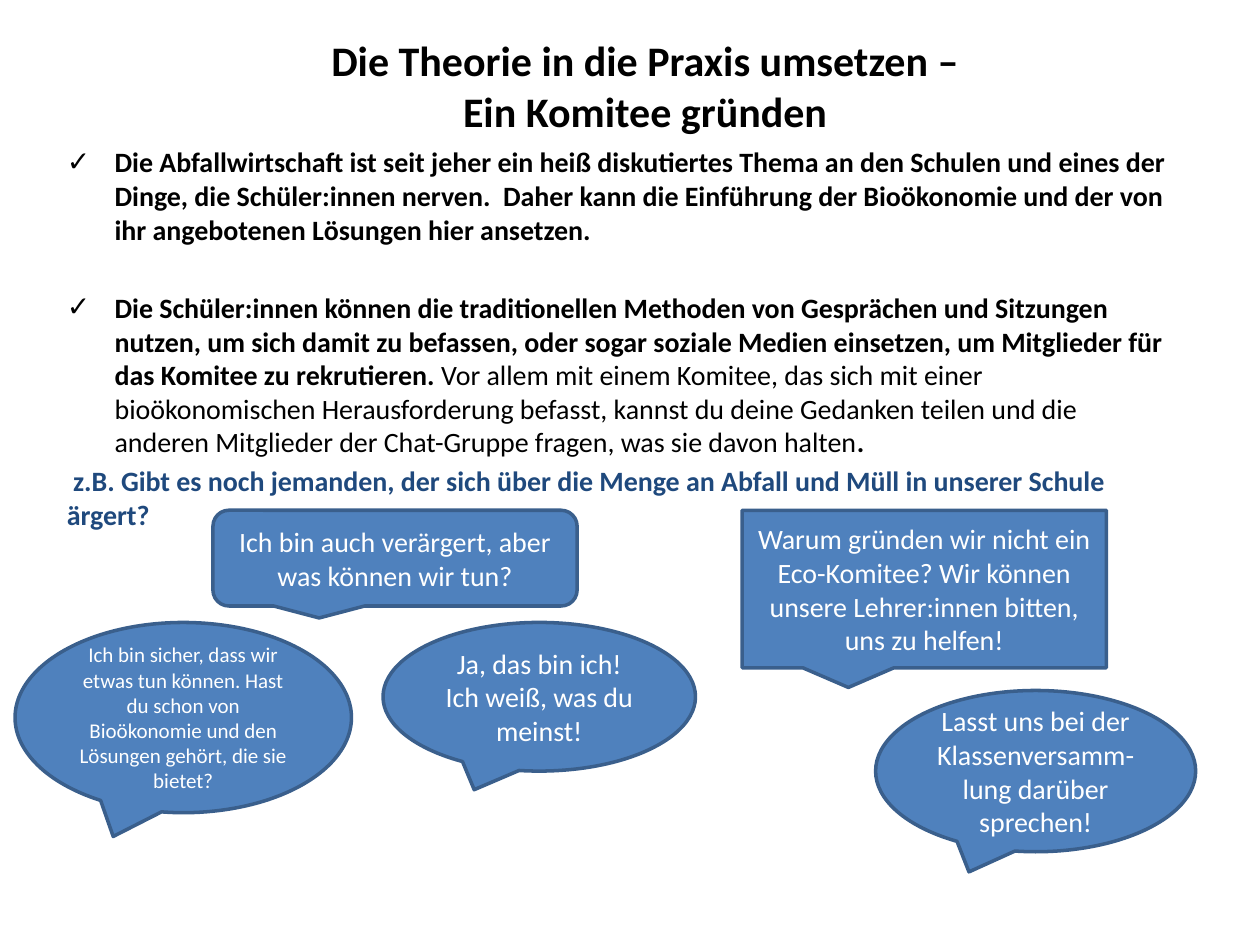
from lxml.etree import SubElement
from pptx import Presentation
from pptx.dml.color import RGBColor
from pptx.enum.shapes import MSO_SHAPE
from pptx.enum.text import MSO_ANCHOR, MSO_AUTO_SIZE, PP_ALIGN
from pptx.oxml.ns import qn
from pptx.util import Inches, Pt

BLACK = RGBColor(0x00, 0x00, 0x00)
WHITE = RGBColor(0xFF, 0xFF, 0xFF)
NAVY = RGBColor(0x1F, 0x49, 0x7D)
BLUE = RGBColor(0x4F, 0x81, 0xBD)
OUTLINE = RGBColor(0x3A, 0x5F, 0x8C)
ROW_TOP, ROW_MIDDLE = 4.05, 4.94


def add_span(para, text, color, **formats):
    span = para.add_run()
    span.text = text
    for name, value in {"name": "Calibri", "size": Pt(16), "bold": False, **formats}.items():
        setattr(span.font, name, value)
    span.font.color.rgb = color


def place(box, left, top, width, height):
    box.left, box.top, box.width, box.height = map(Inches, (left, top, width, height))


deck = Presentation()
deck.slide_width, deck.slide_height = Inches(10), Inches(7.5)
page = deck.slides.add_slide(deck.slide_layouts[1])

# Title
title = page.shapes.title
place(title, 2.48, 0.05, 5.28, 1.25)
title.text_frame.auto_size = MSO_AUTO_SIZE.NONE
title.text_frame.vertical_anchor = MSO_ANCHOR.MIDDLE
heading = title.text_frame.paragraphs[0]
heading.alignment = PP_ALIGN.CENTER
add_span(heading, "Die Theorie in die Praxis umsetzen – Ein Komitee gründen",
         BLACK, size=Pt(24), bold=True)

# Checklist: bullet, space before, spans of text, colour and weight
checklist = [
    ("✓", 0, [
        ("Die Abfallwirtschaft ist seit jeher ein heiß diskutiertes Thema an den Schulen "
         "und eines der Dinge, die Schüler:innen nerven.  Daher kann die Einführung der "
         "Bioökonomie und der von ihr angebotenen Lösungen hier ansetzen.", BLACK, True)]),
    ("✓", 25.6, [
        ("Die Schüler:innen können die traditionellen Methoden von Gesprächen und Sitzungen "
         "nutzen, um sich damit zu befassen, oder sogar soziale Medien einsetzen, um "
         "Mitglieder für das Komitee zu rekrutieren. ", BLACK, True),
        ("Vor allem mit einem Komitee, das sich mit einer bioökonomischen Herausforderung "
         "befasst, kannst du deine Gedanken teilen und die anderen Mitglieder der "
         "Chat-Gruppe fragen, was sie davon halten", BLACK, False),
        (".", BLACK, True)]),
    (None, 3.2, [
        (" z.B. Gibt es noch jemanden, der sich über die Menge an Abfall und Müll in "
         "unserer Schule ärgert?", NAVY, True)]),
]
body = page.placeholders[1]
place(body, 0.43, 1.1, 9, 5.91)
frame = body.text_frame
frame.auto_size = MSO_AUTO_SIZE.NONE
for index, (bullet, gap, spans) in enumerate(checklist):
    para = frame.add_paragraph() if index else frame.paragraphs[0]
    properties = para._p.get_or_add_pPr()
    indent = Inches(0.38) if bullet else 0
    properties.set("marL", str(indent))
    properties.set("indent", str(-indent))
    if bullet:
        SubElement(properties, qn("a:buFont"), typeface="Arial")
        SubElement(properties, qn("a:buChar"), char=bullet)
    else:
        SubElement(properties, qn("a:buNone"))
    para.space_before = Pt(gap)
    for text, color, bold in spans:
        add_span(para, text, color, bold=bold)

# Speech bubbles: shape, position, text size, text
ELLIPSE = MSO_SHAPE.OVAL_CALLOUT
bubbles = [
    (ELLIPSE, (3.04, ROW_MIDDLE, 2.48, 1.18), 16,
     "Ja, das bin ich! Ich weiß, was du meinst!"),
    (MSO_SHAPE.ROUNDED_RECTANGULAR_CALLOUT, (1.69, ROW_TOP, 2.89, 0.76), 16,
     "Ich bin auch verärgert, aber was können wir tun?"),
    (ELLIPSE, (6.95, 5.48, 2.54, 1.28), 16,
     "Lasst uns bei der Klassenversamm-lung darüber sprechen!"),
    (MSO_SHAPE.RECTANGULAR_CALLOUT, (5.89, ROW_TOP, 2.89, 1.25), 16,
     "Warum gründen wir nicht ein Eco-Komitee? Wir können unsere Lehrer:innen bitten, "
     "uns zu helfen!"),
    (ELLIPSE, (0.12, ROW_MIDDLE, 2.67, 1.51), 12,
     "Ich bin sicher, dass wir etwas tun können. Hast du schon von Bioökonomie und den "
     "Lösungen gehört, die sie bietet?"),
]
for kind, area, size, text in bubbles:
    bubble = page.shapes.add_shape(kind, *map(Inches, area))
    bubble.shadow.inherit = False
    bubble.fill.solid()
    bubble.fill.fore_color.rgb = BLUE
    bubble.line.color.rgb = OUTLINE
    bubble.line.width = Pt(2)
    bubble.text_frame.word_wrap = True
    bubble.text_frame.vertical_anchor = MSO_ANCHOR.MIDDLE
    para = bubble.text_frame.paragraphs[0]
    para.alignment = PP_ALIGN.CENTER
    add_span(para, text, WHITE, size=Pt(size))

deck.save("out.pptx")
